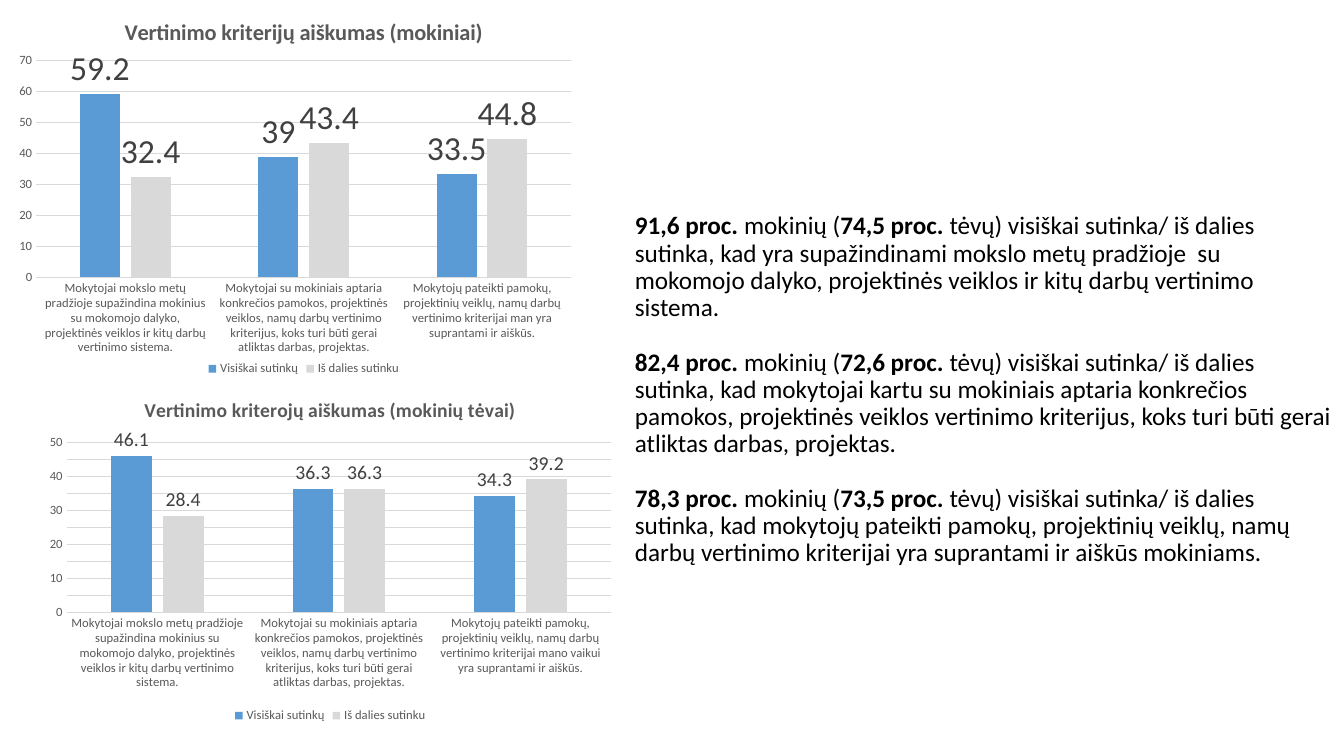
from copy import deepcopy

from lxml import etree
from pptx import Presentation
from pptx.chart.data import CategoryChartData
from pptx.dml.color import RGBColor
from pptx.enum.chart import XL_CHART_TYPE, XL_LABEL_POSITION, XL_LEGEND_POSITION, XL_TICK_MARK
from pptx.enum.text import MSO_ANCHOR
from pptx.oxml.ns import qn
from pptx.util import Cm, Pt

COLUMNS = XL_CHART_TYPE.COLUMN_CLUSTERED
OUTSIDE_END = XL_LABEL_POSITION.OUTSIDE_END
BOTTOM = XL_LEGEND_POSITION.BOTTOM
NO_TICKS = XL_TICK_MARK.NONE
MIDDLE = MSO_ANCHOR.MIDDLE

BLACK = RGBColor(0x00, 0x00, 0x00)
BLUE = RGBColor(0x5B, 0x9B, 0xD5)
LIGHT_GREY = RGBColor(0xD9, 0xD9, 0xD9)
TEXT_GREY = RGBColor(0x59, 0x59, 0x59)
LABEL_GREY = RGBColor(0x40, 0x40, 0x40)
FONT = "Calibri"

SERIES = [("Visiškai sutinkų", BLUE), ("Iš dalies sutinku", LIGHT_GREY)]
SHARED_CATEGORIES = [
    "Mokytojai mokslo metų pradžioje supažindina mokinius su mokomojo dalyko, "
    "projektinės veiklos ir kitų darbų vertinimo sistema.",
    "Mokytojai su mokiniais aptaria konkrečios pamokos, projektinės veiklos, namų darbų "
    "vertinimo kriterijus, koks turi būti gerai atliktas darbas, projektas.",
]
CHARTS = [
    {
        "title": "Vertinimo kriterijų aiškumas (mokiniai)",
        "title_size": 16,
        "box": (0.48, 0, 14.35, 9.58),
        "plot": (0.03, 0.16, 0.94, 0.57),
        "last_category": "Mokytojų pateikti pamokų, projektinių veiklų, namų darbų "
                         "vertinimo kriterijai man yra suprantami ir aiškūs.",
        "values": [(59.2, 39, 33.5), (32.4, 43.4, 44.8)],
        "label_size": 24,
        "maximum": 70,
        "minor_grid": False,
    },
    {
        "title": "Vertinimo kriterojų aiškumas (mokinių tėvai)",
        "title_size": 14,
        "box": (0.94, 9.58, 14.76, 8.74),
        "plot": (0.05, 0.18, 0.93, 0.49),
        "last_category": "Mokytojų pateikti pamokų, projektinių veiklų, namų darbų "
                         "vertinimo kriterijai mano vaikui yra suprantami ir aiškūs.",
        "values": [(46.1, 36.3, 34.3), (28.4, 36.3, 39.2)],
        "label_size": 14,
        "maximum": 50,
        "minor_grid": True,
    },
]
FINDINGS = [
    ("91,6 proc. ", "74,5 proc. ",
     "kad yra supažindinami mokslo metų pradžioje  su mokomojo dalyko, "
     "projektinės veiklos ir kitų darbų vertinimo sistema."),
    ("82,4 proc. ", "72,6 proc. ",
     "kad mokytojai kartu su mokiniais aptaria konkrečios pamokos, projektinės veiklos "
     "vertinimo kriterijus, koks turi būti gerai atliktas darbas, projektas."),
    ("78,3 proc. ", "73,5 proc. ",
     "kad mokytojų pateikti pamokų, projektinių veiklų, namų darbų vertinimo kriterijai "
     "yra suprantami ir aiškūs mokiniams."),
]


def style_font(font, size, color, bold=False):
    font.name = FONT
    font.size = Pt(size)
    font.bold = bold
    font.color.rgb = color


def place_plot(chart, position):
    plot_area = chart.element.find(".//" + qn("c:plotArea"))
    layout = plot_area.find(qn("c:layout"))
    if layout is None:
        layout = etree.Element(qn("c:layout"))
        plot_area.insert(0, layout)
    manual = etree.SubElement(layout, qn("c:manualLayout"))
    settings = [("layoutTarget", "inner"), ("xMode", "edge"), ("yMode", "edge")]
    settings += zip("xywh", position)
    for name, value in settings:
        etree.SubElement(manual, qn("c:" + name)).set("val", str(value))


presentation = Presentation()
presentation.slide_width = Cm(33.87)
presentation.slide_height = Cm(19.05)
slide = presentation.slides.add_slide(presentation.slide_layouts[6])

findings_box = slide.shapes.add_textbox(Cm(15.75), Cm(5.3), Cm(18.16), Cm(9.06))
text_frame = findings_box.text_frame
text_frame.word_wrap = True
text_frame.vertical_anchor = MIDDLE
for index, (pupils, parents, statement) in enumerate(FINDINGS):
    paragraph = text_frame.add_paragraph() if index else text_frame.paragraphs[0]
    paragraph.line_spacing = 0.9
    paragraph.space_before = Pt(19.5 if index else 0)
    parts = [
        (pupils, True),
        ("mokinių (", False),
        (parents, True),
        ("tėvų) visiškai sutinka/ iš dalies sutinka, " + statement, False),
    ]
    for text, bold in parts:
        run = paragraph.add_run()
        run.text = text
        style_font(run.font, 18, BLACK, bold)

for survey in CHARTS:
    chart_data = CategoryChartData()
    chart_data.categories = SHARED_CATEGORIES + [survey["last_category"]]
    for (name, color), values in zip(SERIES, survey["values"]):
        chart_data.add_series(name, values)
    box = [Cm(length) for length in survey["box"]]
    chart = slide.shapes.add_chart(COLUMNS, *box, chart_data).chart
    style_font(chart.font, 10, BLACK)
    place_plot(chart, survey["plot"])

    chart.has_title = True
    title = chart.chart_title.text_frame
    title.text = survey["title"]
    style_font(title.paragraphs[0].runs[0].font, survey["title_size"], TEXT_GREY, True)

    chart.has_legend = True
    chart.legend.position = BOTTOM
    chart.legend.include_in_layout = False
    style_font(chart.legend.font, 9, TEXT_GREY)

    category_axis, value_axis = chart.category_axis, chart.value_axis
    for axis in (category_axis, value_axis):
        axis.major_tick_mark = NO_TICKS
        axis.minor_tick_mark = NO_TICKS
        style_font(axis.tick_labels.font, 9, TEXT_GREY)
    value_axis.minimum_scale = 0
    value_axis.maximum_scale = survey["maximum"]
    value_axis.major_unit = 10
    value_axis.format.line.fill.background()
    for line in (category_axis.format.line, value_axis.major_gridlines.format.line):
        line.color.rgb = LIGHT_GREY
        line.width = Pt(0.75)
    if survey["minor_grid"]:
        value_axis.minor_unit = 5
        value_axis.has_minor_gridlines = True
        major_grid = chart.element.find(".//" + qn("c:majorGridlines"))
        minor_grid = chart.element.find(".//" + qn("c:minorGridlines"))
        minor_grid.append(deepcopy(major_grid.find(qn("c:spPr"))))

    plot = chart.plots[0]
    plot.vary_by_categories = False
    plot.gap_width = 219
    plot.overlap = -27
    for series, (name, color) in zip(plot.series, SERIES):
        series.format.fill.solid()
        series.format.fill.fore_color.rgb = color
        labels = series.data_labels
        labels.show_value = True
        labels.position = OUTSIDE_END
        style_font(labels.font, survey["label_size"], LABEL_GREY)

presentation.save("out.pptx")
